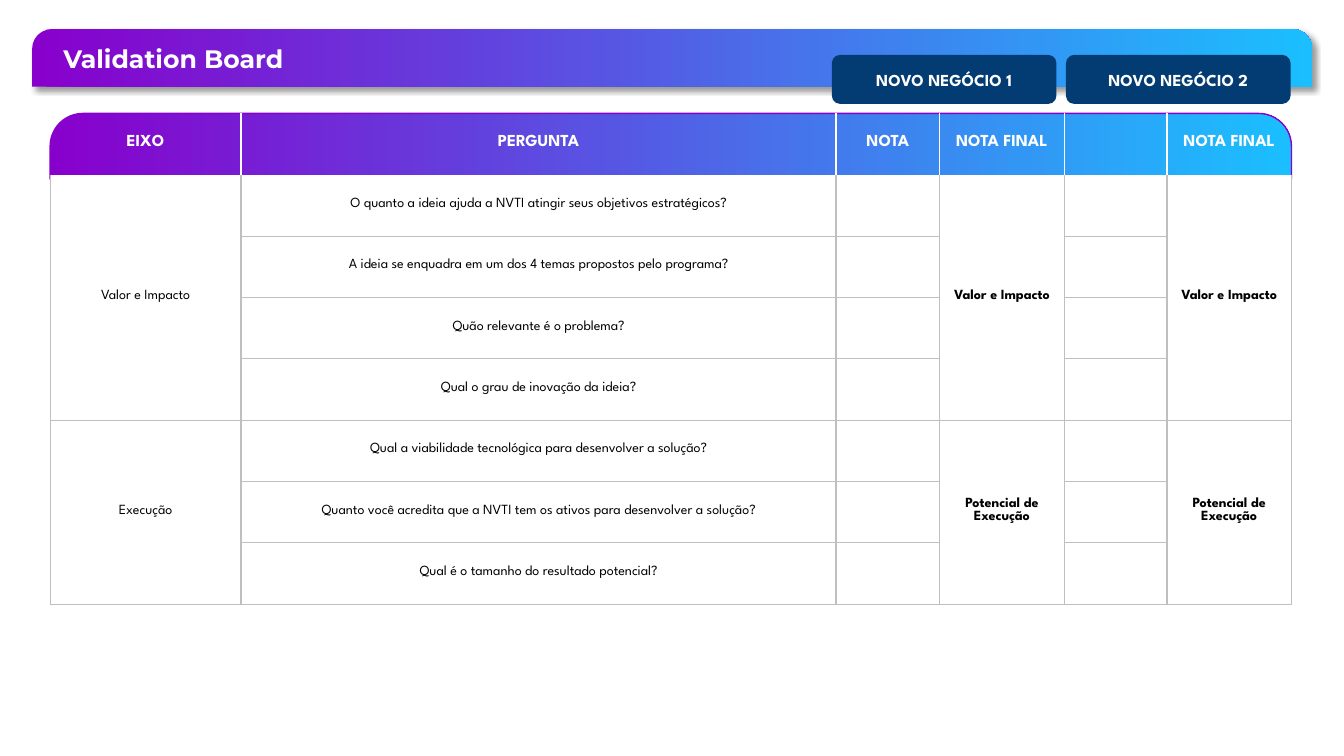
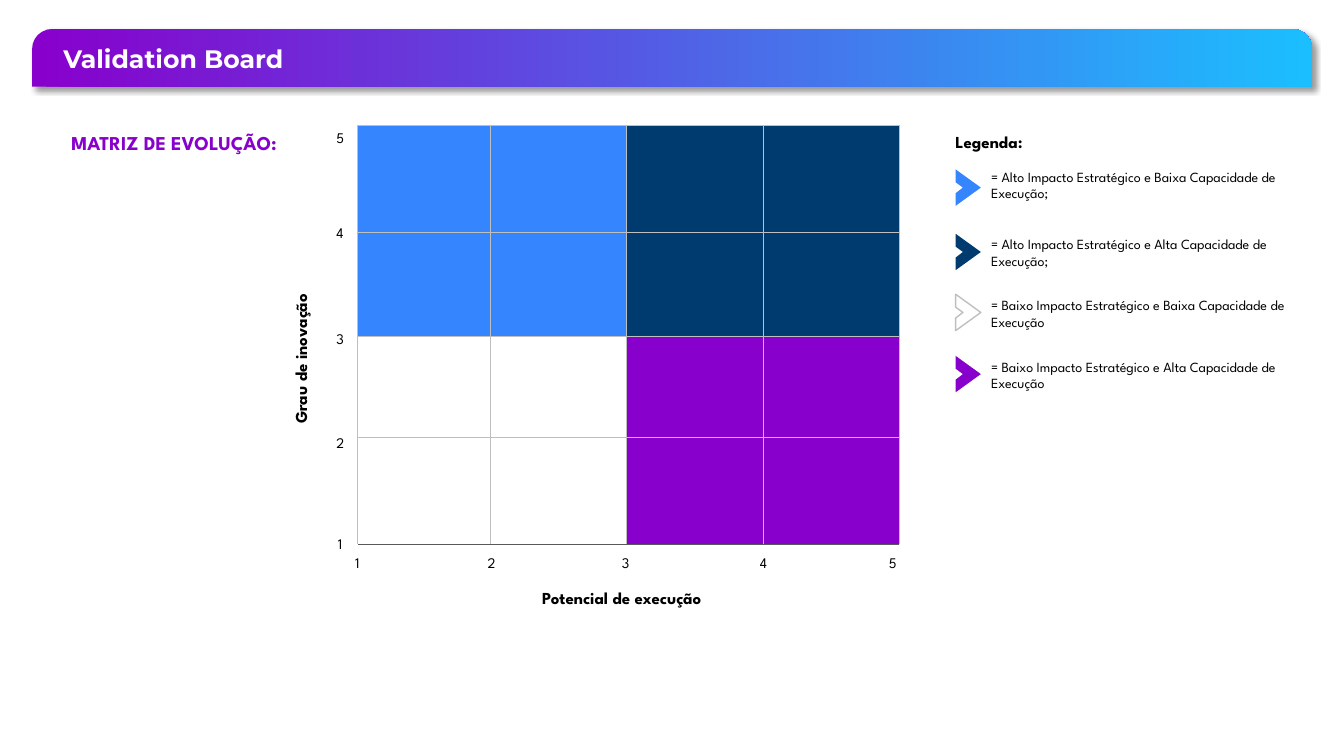
from lxml import etree
from pptx import Presentation
from pptx.dml.color import RGBColor
from pptx.enum.shapes import MSO_CONNECTOR, MSO_SHAPE
from pptx.enum.text import MSO_ANCHOR, PP_ALIGN
from pptx.oxml.ns import qn
from pptx.util import Pt

PURPLE = RGBColor(0x88, 0x00, 0xCC)
CYAN = RGBColor(0x1B, 0xBF, 0xFF)
BLUE = RGBColor(0x34, 0x85, 0xFE)
NAVY = RGBColor(0x00, 0x3B, 0x6F)
BUTTON = RGBColor(0x03, 0x3C, 0x73)
WHITE = RGBColor(0xFF, 0xFF, 0xFF)
BLACK = RGBColor(0x00, 0x00, 0x00)
GRAY = RGBColor(0xBF, 0xBF, 0xBF)
DARK_GRAY = RGBColor(0x59, 0x59, 0x59)

CENTER, LEFT, JUSTIFY = PP_ALIGN.CENTER, PP_ALIGN.LEFT, PP_ALIGN.JUSTIFY
TOP, MIDDLE = MSO_ANCHOR.TOP, MSO_ANCHOR.MIDDLE
RECT, ROUND_RECT = MSO_SHAPE.RECTANGLE, MSO_SHAPE.ROUNDED_RECTANGLE
ROUND_TOP = MSO_SHAPE.ROUND_2_SAME_RECTANGLE
STRAIGHT = MSO_CONNECTOR.STRAIGHT

BODY_FONT, TITLE_FONT = "League Spartan", "Montserrat"
TITLE = "Validation Board"

HEADERS = ["EIXO", "PERGUNTA", "NOTA", "NOTA FINAL", "", "NOTA FINAL"]
AXES = [
    ("Valor e Impacto", "Valor e Impacto", [
        "O quanto a ideia ajuda a NVTI atingir seus objetivos estratégicos?",
        "A ideia se enquadra em um dos 4 temas propostos pelo programa?",
        "Quão relevante é o problema?",
        "Qual o grau de inovação da ideia?",
    ]),
    ("Execução", "Potencial de Execução", [
        "Qual a viabilidade tecnológica para desenvolver a solução?",
        "Quanto você acredita que a NVTI tem os ativos para desenvolver a solução?",
        "Qual é o tamanho do resultado potencial?",
    ]),
]
BUSINESSES = ["NOVO NEGÓCIO 1", "NOVO NEGÓCIO 2"]
COL_WIDTHS = [136.4, 425, 74, 89, 73.4, 88.9]
ROW_HEIGHT = 43.85
TABLE_LEFT, TABLE_TOP = 35.8, 81

GRID_X = [255.6, 350.4, 447.6, 545, 642.2]
GRID_Y = [89.6, 166, 240, 312.4, 388.8]
QUADRANTS = [[BLUE, NAVY], [None, PURPLE]]
X_LABEL_CENTERS = [255.2, 351, 446.8, 545.4, 637.6]
Y_LABEL_CENTERS = [387.7, 315, 240.8, 165.2, 97.6]
LEGEND = [
    (121, 116.6, BLUE, "= Alto Impacto Estratégico e Baixa Capacidade de Execução;"),
    (167, 164.9, NAVY, "= Alto Impacto Estratégico e Alta Capacidade de Execução;"),
    (210.2, 208.4, None, "= Baixo Impacto Estratégico e Baixa Capacidade de Execução"),
    (254.2, 252.3, PURPLE, "= Baixo Impacto Estratégico e Alta Capacidade de Execução"),
]
CHEVRON = [(18, 13), (0, 0), (0, 9.2), (5.2, 13), (0, 17), (0, 26)]
LEGEND_LEFT = 682.6


def style(p, size, color, bold=False, align=LEFT, font=BODY_FONT):
    p.alignment = align
    for r in p.runs:
        r.font.size, r.font.bold, r.font.name = Pt(size), bold, font
        r.font.color.rgb = color


def add_text(s, text, box, size, color=BLACK, bold=False, align=LEFT,
             font=BODY_FONT, wrap=True):
    sp = s.shapes.add_textbox(*map(Pt, box))
    tf = sp.text_frame
    tf.word_wrap = wrap
    tf.vertical_anchor = TOP
    tf.text = text
    style(tf.paragraphs[0], size, color, bold, align, font)
    return sp


def paint(sp, fill, line=None):
    sp.shadow.inherit = False
    sp.fill.solid()
    sp.fill.fore_color.rgb = fill
    if line is None:
        sp.line.fill.background()
    else:
        sp.line.color.rgb = line
        sp.line.width = Pt(1)


def add_shape(s, kind, box, fill):
    sp = s.shapes.add_shape(kind, *map(Pt, box))
    paint(sp, fill)
    return sp


def add_band(s, box, radius):
    sp = add_shape(s, ROUND_TOP, box, PURPLE)
    sp.adjustments[0], sp.adjustments[1] = radius, 0
    sp.fill.gradient()
    sp.fill.gradient_angle = 0
    for stop, color in zip(sp.fill.gradient_stops, (PURPLE, CYAN)):
        stop.color.rgb = color
    return sp


def add_line(s, x1, y1, x2, y2, color):
    c = s.shapes.add_connector(STRAIGHT, *map(Pt, (x1, y1, x2, y2)))
    c.line.color.rgb = color
    c.line.width = Pt(0.5)
    etree.SubElement(c._element.spPr, qn("a:effectLst"))


def add_title(s):
    sp = add_band(s, (23, 20.9, 914.4, 41), 0.34)
    effects = sp._element.spPr.find(qn("a:effectLst"))
    shadow = etree.SubElement(effects, qn("a:outerShdw"), blurRad=str(Pt(4)),
                              dist=str(Pt(3)), dir="2700000", algn="tl", rotWithShape="0")
    color = etree.SubElement(shadow, qn("a:srgbClr"), val=str(BLACK))
    etree.SubElement(color, qn("a:alpha"), val="40000")
    add_text(s, TITLE, (38.2, 27.4, 406.8, 28.8), 18, WHITE, True, JUSTIFY, TITLE_FONT)


def set_borders(cell, borders):
    tc_pr = cell._tc.get_or_add_tcPr()
    for i, side in enumerate(("L", "R", "T", "B")):
        ln = etree.Element(qn(f"a:ln{side}"), w=str(Pt(1)))
        color = borders.get(side)
        if color is None:
            etree.SubElement(ln, qn("a:noFill"))
        else:
            solid = etree.SubElement(ln, qn("a:solidFill"))
            etree.SubElement(solid, qn("a:srgbClr"), val=str(color))
        tc_pr.insert(i, ln)


def fill_cell(cell, text, size, color, bold):
    cell.margin_left = cell.margin_right = cell.margin_top = Pt(0.9)
    cell.margin_bottom = Pt(2.9)
    cell.vertical_anchor = MIDDLE
    cell.text = text
    style(cell.text_frame.paragraphs[0], size, color, bold, CENTER)


def add_score_table(s):
    n_rows = 1 + sum(len(questions) for _, _, questions in AXES)
    width = sum(COL_WIDTHS)
    frame = s.shapes.add_table(n_rows, len(COL_WIDTHS), Pt(TABLE_LEFT), Pt(TABLE_TOP),
                               Pt(width), Pt(ROW_HEIGHT * n_rows))
    table = frame.table
    table.first_row = table.horz_banding = False
    for col, w in zip(table.columns, COL_WIDTHS):
        col.width = Pt(w)
    for row in table.rows:
        row.height = Pt(ROW_HEIGHT)

    last = len(HEADERS) - 1
    for j, header in enumerate(HEADERS):
        cell = table.cell(0, j)
        fill_cell(cell, header, 12, WHITE, True)
        cell.fill.background()
        set_borders(cell, {"L": WHITE if j else None, "R": WHITE if j < last else None})

    first = 1
    for axis, result, questions in AXES:
        end = first + len(questions) - 1
        for i, question in enumerate(questions, first):
            merged = (axis, result) if i == first else ("", "")
            values = [merged[0], question, "", merged[1], "", merged[1]]
            for j, value in enumerate(values):
                cell = table.cell(i, j)
                fill_cell(cell, value, 10, BLACK, j > 1)
                cell.fill.solid()
                cell.fill.fore_color.rgb = WHITE
                set_borders(cell, {"L": GRAY, "R": GRAY, "B": GRAY,
                                   "T": GRAY if i > 1 else None})
        for j in (0, 3, 5):
            table.cell(first, j).merge(table.cell(end, j))
        first = end + 1


def build_board(s):
    band = add_band(s, (TABLE_LEFT, TABLE_TOP, sum(COL_WIDTHS), 46.8), 0.5)
    band.line.color.rgb = PURPLE
    band.line.width = Pt(1)
    add_title(s)
    add_score_table(s)
    for i, name in enumerate(BUSINESSES):
        sp = add_shape(s, ROUND_RECT, (594.2 + 167.2 * i, 39.2, 160.4, 35), BUTTON)
        tf = sp.text_frame
        tf.vertical_anchor = MIDDLE
        tf.text = name
        style(tf.paragraphs[0], 12, WHITE, True, CENTER)


def add_matrix(s):
    for i, (top, bottom) in enumerate(zip(GRID_Y, GRID_Y[1:])):
        for j, (left, right) in enumerate(zip(GRID_X, GRID_X[1:])):
            color = QUADRANTS[i // 2][j // 2]
            if color is not None:
                add_shape(s, RECT, (left, top, right - left, bottom - top), color)
    for x in GRID_X:
        add_line(s, x, GRID_Y[0], x, GRID_Y[-1], GRAY)
    for y in GRID_Y:
        add_line(s, GRID_X[-1], y, GRID_X[0], y, DARK_GRAY if y == GRID_Y[-1] else GRAY)
    w, h = 19.4, 18
    x_boxes = [(x - w / 2, 392, w, h) for x in X_LABEL_CENTERS]
    y_boxes = [(233.2, y - h / 2, w, h) for y in Y_LABEL_CENTERS]
    for boxes in (x_boxes, y_boxes):
        for n, box in enumerate(boxes, 1):
            add_text(s, str(n), box, 10.5, align=CENTER, wrap=False)
    add_text(s, "Potencial de execução", (380.2, 416.2, 152, 21.6), 12, bold=True, wrap=False)
    sp = add_text(s, "Grau de inovação", (153.4, 245.5, 122.4, 21.6), 12,
                  bold=True, align=CENTER, wrap=False)
    sp.rotation = 270


def add_legend(s):
    sp = add_text(s, "Legenda:", (675.4, 83.5, 83.5, 25.9), 12, bold=True, align=JUSTIFY)
    sp.text_frame.paragraphs[0].line_spacing = 1.5
    for arrow_top, text_top, color, text in LEGEND:
        points = [(Pt(LEGEND_LEFT + x), Pt(arrow_top + y)) for x, y in CHEVRON]
        builder = s.shapes.build_freeform(*points[0])
        builder.add_line_segments(points[1:], close=True)
        paint(builder.convert_to_shape(), color or WHITE, None if color else GRAY)
        add_text(s, text, (700.8, text_top, 234.4, 31.7), 10)


def build_matrix(s):
    add_title(s)
    add_legend(s)
    add_matrix(s)
    add_text(s, "MATRIZ DE EVOLUÇÃO:", (43.9, 90, 173.5, 24.5), 14, PURPLE, True)


def main():
    prs = Presentation()
    prs.slide_width, prs.slide_height = Pt(960), Pt(540)
    for build in (build_board, build_matrix):
        build(prs.slides.add_slide(prs.slide_layouts[6]))
    prs.save("out.pptx")


if __name__ == "__main__":
    main()
